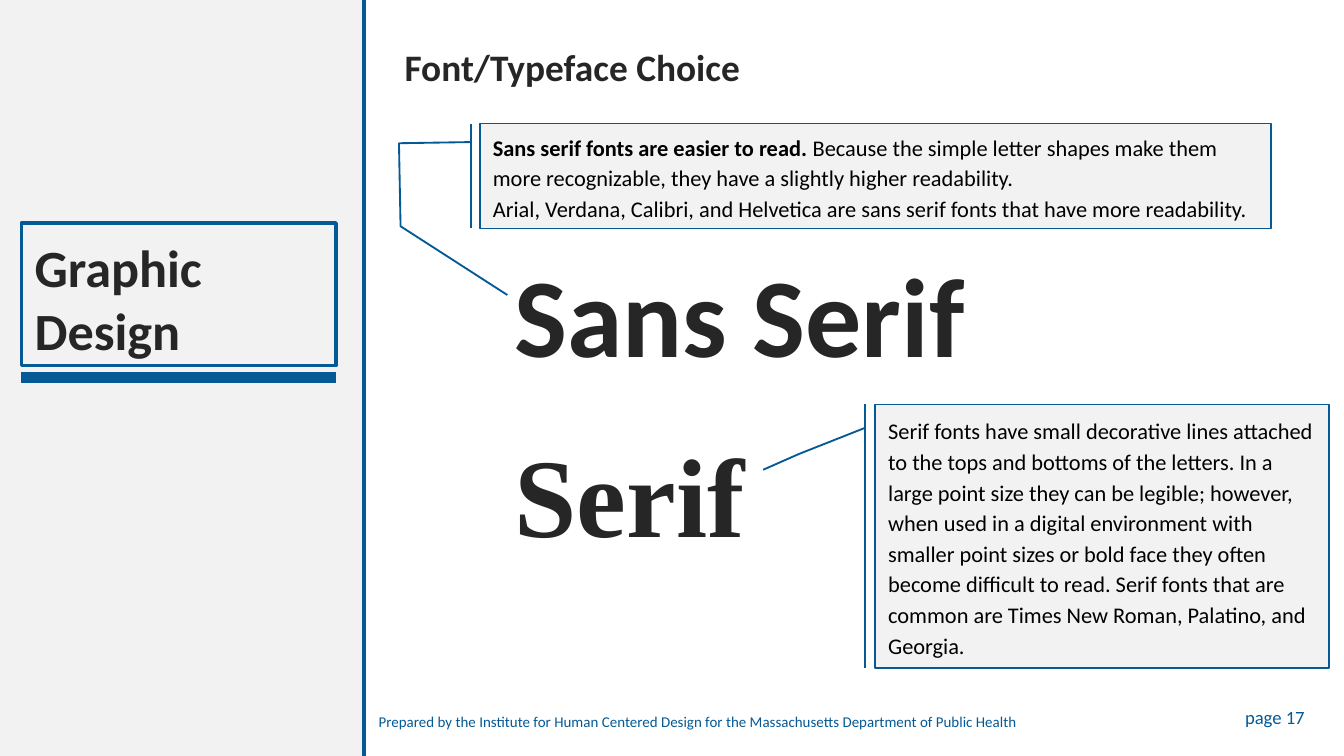
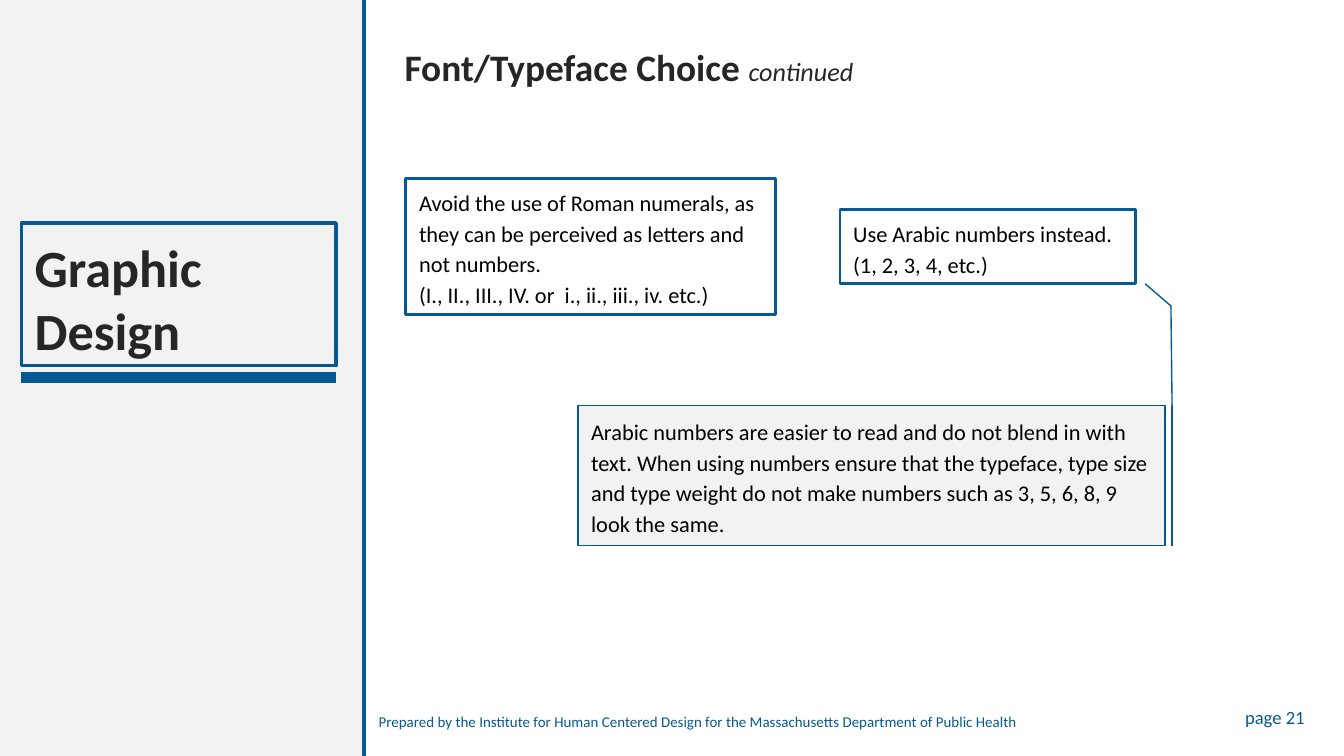
from lxml import etree
from pptx import Presentation
from pptx.dml.color import RGBColor
from pptx.enum import shapes, text
from pptx.oxml import ns
from pptx.util import Pt

BLUE, GREY, INK, BLACK = "055994", "F2F2F2", "262626", "000000"
FONT = "Calibri"
RECT = shapes.MSO_SHAPE.RECTANGLE
CALLOUT_2 = shapes.MSO_SHAPE.LINE_CALLOUT_2_BORDER_AND_ACCENT_BAR
CALLOUT_3 = shapes.MSO_SHAPE.LINE_CALLOUT_3_BORDER_AND_ACCENT_BAR
TOP, MIDDLE = text.MSO_ANCHOR.TOP, text.MSO_ANCHOR.MIDDLE
FOOTER = ("Prepared by the Institute for Human Centered Design for the "
          "Massachusetts Department of Public Health")

rgb = RGBColor.from_string


def add_panel(s, kind, box, fill=None, line=None):
    """Add a preset shape; line is a width in points, None for no outline."""
    sp = s.shapes.add_shape(kind, *map(Pt, box))
    sp.shadow.inherit = False
    if fill:
        sp.fill.solid()
        sp.fill.fore_color.rgb = rgb(fill)
    else:
        sp.fill.background()
    if line:
        sp.line.color.rgb = rgb(BLUE)
        sp.line.width = Pt(line)
    else:
        sp.line.fill.background()
    return sp


def write(sp, paragraphs, size, color, anchor=TOP, wrap=True, spacing=None, before=None, bold=False):
    """Fill a shape with paragraphs, each a list of (text, font values) runs."""
    tf = sp.text_frame
    tf.word_wrap = wrap
    tf.auto_size = text.MSO_AUTO_SIZE.NONE
    tf.vertical_anchor = anchor
    for i, runs in enumerate(paragraphs):
        p = tf.add_paragraph() if i else tf.paragraphs[0]
        p.alignment = text.PP_ALIGN.LEFT
        if spacing:
            p.line_spacing = spacing
        if before:
            p.space_before = Pt(before)
        for words, values in runs:
            for n, part in enumerate(words.split("\n")):
                if n:
                    p.add_line_break()
                r = p.add_run()
                r.text = part
                r.font.color.rgb = rgb(color)
                for name, value in ({"name": FONT, "size": Pt(size), "bold": bold} | values).items():
                    setattr(r.font, name, value)


pages = [
    {
        "number": 17,
        "title": [("Font/Typeface Choice", {})],
        "samples": [[("Sans Serif", {})], [("Serif", {"name": "Times New Roman"})]],
        "panels": [
            (CALLOUT_3, (257, 66.2, 424, 56.2), GREY, 1,
             (0.177, -0.011, 0.188, -0.102, 0.979, -0.1, 1.634, 0.035),
             [[("Sans serif fonts are easier to read.", {"bold": True}),
               (" Because the simple letter shapes make them more recognizable, they have a "
                "slightly higher readability. \nArial, Verdana, Calibri, and Helvetica are "
                "sans serif fonts that have more readability.", {})]]),
            (CALLOUT_2, (468.7, 216.7, 243.4, 141.1), GREY, 1,
             (0.089, -0.022, 0.188, -0.167, 0.248, -0.246),
             [[("Serif fonts have small decorative lines attached to the tops and bottoms of "
                "the letters. In a large point size they can be legible; however, when used in "
                "a digital environment with smaller point sizes or bold face they often become "
                "difficult to read. Serif fonts that are common are Times New Roman, Palatino, "
                "and Georgia.", {})]]),
        ],
    },
    {
        "number": 21,
        "title": [("Font/Typeface Choice ", {}),
                  ("continued", {"size": Pt(14), "bold": False, "italic": True})],
        "samples": [],
        "panels": [
            (RECT, (217.4, 95.8, 198, 72.7), None, 1.5, (),
             [[("Avoid the use of Roman numerals, as they can be perceived as letters and "
                "not numbers.", {})],
              [("(I., II., III., IV. or  i., ii., iii., iv. etc.)", {})]]),
            (RECT, (450, 112.3, 158.4, 39.6), None, 1.5, (),
             [[("Use Arabic numbers instead.", {})], [("(1, 2, 3, 4, etc.)", {})]]),
            (CALLOUT_2, (309.6, 217.4, 314.6, 74.9), GREY, 0.75,
             (0.033, 1.012, -0.714, 1.01, -0.873, 0.966),
             [[("Arabic numbers are easier to read and do not blend in with text. When using "
                "numbers ensure that the typeface, type size and type weight do not make "
                "numbers such as 3, 5, 6, 8, 9 look the same.", {})]]),
        ],
    },
]

prs = Presentation()
prs.slide_width, prs.slide_height = Pt(720), Pt(405)

for page in pages:
    s = prs.slides.add_slide(prs.slide_layouts.get_by_name("Title Only"))

    # Title
    title = s.shapes.title
    title.left, title.top, title.width, title.height = map(Pt, (209.5, 16.6, 463, 33.1))
    write(title, [page["title"]], 20, INK, spacing=1.14, bold=True)

    # Footer
    number = s.shapes.add_textbox(*map(Pt, (657.4, 373.7, 51.1, 20.9)))
    write(number, [[(" ", {"size": Pt(11)}), (f"page {page['number']}", {})]], 10, BLUE, wrap=False)
    footer = s.shapes.add_textbox(*map(Pt, (195.8, 378, 405.4, 21.6)))
    write(footer, [[(FOOTER, {})]], 8, BLUE)

    # Sidebar with the section name
    add_panel(s, RECT, (0, 0, 195, 405), GREY)
    section = s.shapes.add_textbox(*map(Pt, (11.5, 122.4, 160.6, 74.9)))
    write(section, [[("Graphic Design", {})]], 28, INK, bold=True)

    # Content
    if page["samples"]:
        samples = s.shapes.add_textbox(*map(Pt, (268.6, 128.2, 354.2, 177)))
        write(samples, page["samples"], 60, INK, before=24, bold=True)
    for kind, box, fill, line, adjustments, paragraphs in page["panels"]:
        sp = add_panel(s, kind, box, fill, line)
        for i, value in enumerate(adjustments):
            sp.adjustments[i] = value
        write(sp, paragraphs, 12, BLACK, TOP if kind == RECT else MIDDLE, spacing=1.14)

    # Section frame, its underline and the sidebar edge
    add_panel(s, RECT, (11.5, 119.5, 168.5, 76.3), line=2)
    for ends, width in (((11.5, 202.3, 180, 202.3), 6), ((195, 405, 195, 0), 2.25)):
        rule = s.shapes.add_connector(shapes.MSO_CONNECTOR.STRAIGHT, *map(Pt, ends))
        rule.line.color.rgb = rgb(BLUE)
        rule.line.width = Pt(width)
        etree.SubElement(rule.element.spPr, ns.qn("a:effectLst"))

prs.save("out.pptx")
